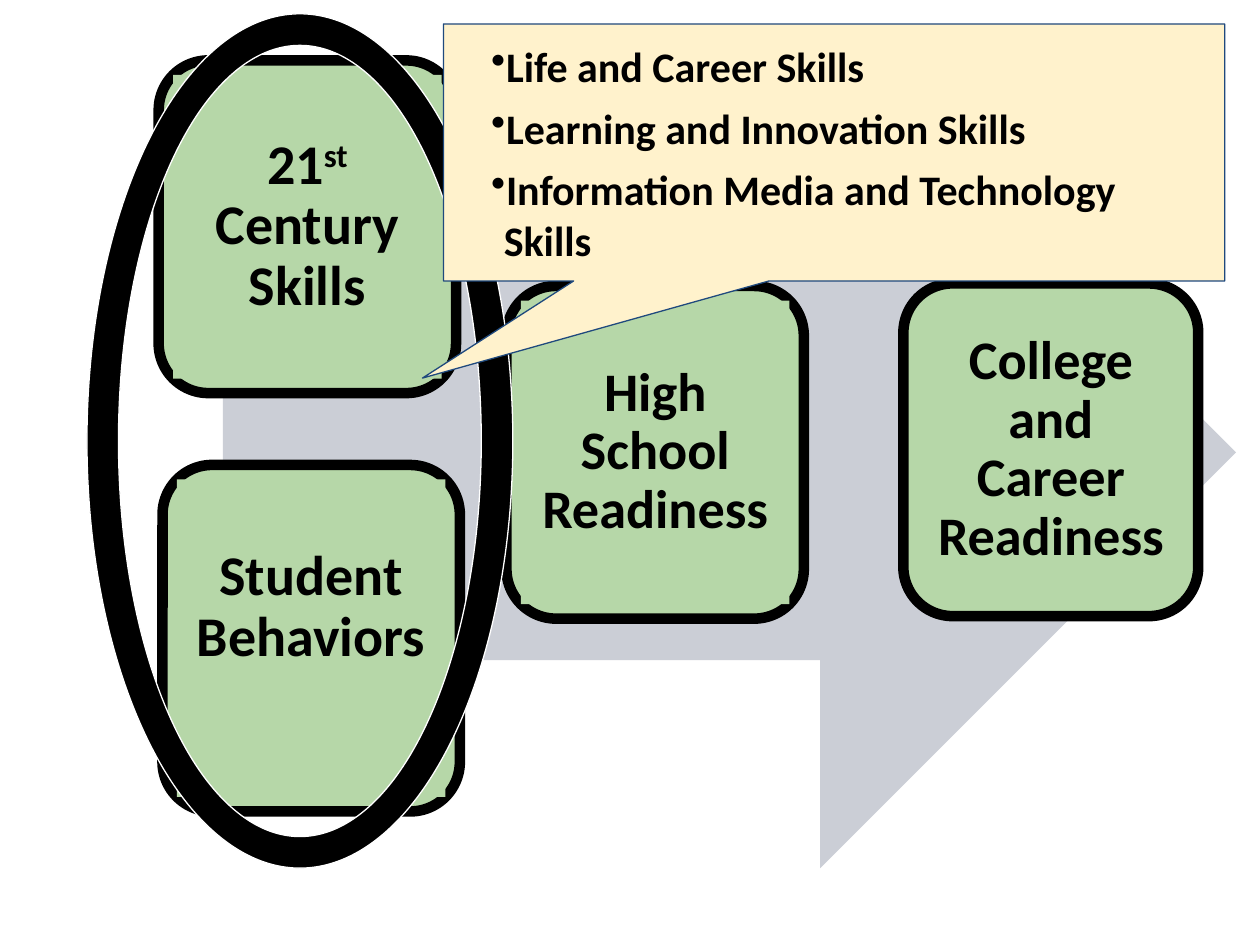
from lxml import etree
from pptx import Presentation
from pptx.dml.color import RGBColor
from pptx.enum import shapes, text
from pptx.util import Inches, Pt

HUES = {"arrow": "CBCED6", "card": "B6D7A8", "ink": "000000",
        "note": "FFF2CC", "edge": "1F497D", "white": "FFFFFF"}
KIND = shapes.MSO_SHAPE
NS = "{http://schemas.openxmlformats.org/drawingml/2006/main}"


def hue(name):
    return RGBColor.from_string(HUES[name])


def write(para, words, size=32, color="ink", bold=True, raised=0):
    """Add one formatted run; raised is a superscript offset in percent."""
    run = para.add_run()
    run.text = words
    font = run.font
    font.name, font.size, font.bold = "Calibri", Pt(size), bold
    font.color.rgb = hue(color)
    if raised:
        run._r.get_or_add_rPr().set("baseline", str(raised * 1000))


class Board:
    def __init__(self, slide):
        self.slide = slide

    def shape(self, kind, box, fill=None, line=None, width=0.75, adj=()):
        item = self.slide.shapes.add_shape(kind, *map(Inches, box))
        item.shadow.inherit = False
        if fill:
            item.fill.solid()
            item.fill.fore_color.rgb = hue(fill)
        else:
            item.fill.background()
        if line:
            item.line.color.rgb = hue(line)
            item.line.width = Pt(width)
        else:
            item.line.fill.background()
        for i, value in enumerate(adj):
            item.adjustments[i] = value
        return item

    def frame(self, item, pad, foot=0):
        body = item.text_frame
        body.word_wrap = True
        body.vertical_anchor = text.MSO_ANCHOR.MIDDLE
        body.margin_left = body.margin_right = body.margin_top = Inches(pad)
        body.margin_bottom = Inches(pad + foot)
        return body

    def card(self, box, runs, size, fill="card", foot=0):
        """Rounded card with an inset label area; foot lifts the label."""
        left, top, wide, high = box
        self.shape(KIND.ROUNDED_RECTANGLE, box, "card", "ink", 6, [0.167])
        inset = 0.115
        inner = (left + inset, top + inset, wide - 2 * inset, high - 2 * inset)
        label = self.shape(KIND.RECTANGLE, inner, fill)
        para = self.frame(label, 0.13, foot).paragraphs[0]
        para.alignment = text.PP_ALIGN.CENTER
        para.line_spacing = 0.9
        for words, raised in runs:
            write(para, words, size=size, raised=raised)

    def callout(self, box, lines):
        item = self.shape(KIND.ROUNDED_RECTANGULAR_CALLOUT, box, "note", "edge",
                          adj=[-0.527, 0.878, 0])
        body = self.frame(item, 0.1)
        for i, words in enumerate(lines):
            para = body.add_paragraph() if i else body.paragraphs[0]
            para.alignment = text.PP_ALIGN.LEFT
            props = para._p.get_or_add_pPr()
            props.set("marL", str(Inches(0.38)))
            props.set("indent", str(Inches(-0.1)))
            if i:
                para.space_before = Pt(6.4)
            tint = etree.SubElement(props, NS + "buClr")
            etree.SubElement(tint, NS + "srgbClr", val=HUES["ink"])
            etree.SubElement(props, NS + "buChar", char="•")
            write(para, words, size=24)


def main():
    deck = Presentation()
    deck.slide_width, deck.slide_height = Inches(10), Inches(7.5)
    board = Board(deck.slides.add_slide(deck.slide_layouts[6]))

    # Background arrow
    board.shape(KIND.RIGHT_ARROW, (1.77, 0.29, 8.04, 6.6), "arrow", adj=[0.5, 0.5])

    # Cards leading to readiness
    board.card((1.29, 3.69, 2.36, 2.75), [("Student Behaviors", 0)], 32, foot=0.48)
    board.card((1.26, 0.48, 2.36, 2.64),
               [("21", 0), ("st", 30), (" Century Skills", 0)], 32)
    board.card((4.02, 2.27, 2.36, 2.64), [("High School Readiness", 0)], 31)
    board.card((7.17, 2.25, 2.34, 2.64), [("College and Career Readiness", 0)], 31,
               fill=None)

    # Ring around the first two cards
    board.shape(KIND.DONUT, (0.69, 0.11, 3.38, 6.78), "ink", "white", adj=[0.074])

    # Callout with the skill list
    board.callout((3.52, 0.19, 6.2, 2.04), [
        "Life and Career Skills",
        "Learning and Innovation Skills",
        "Information Media and Technology Skills",
    ])
    deck.save("out.pptx")


if __name__ == "__main__":
    main()
